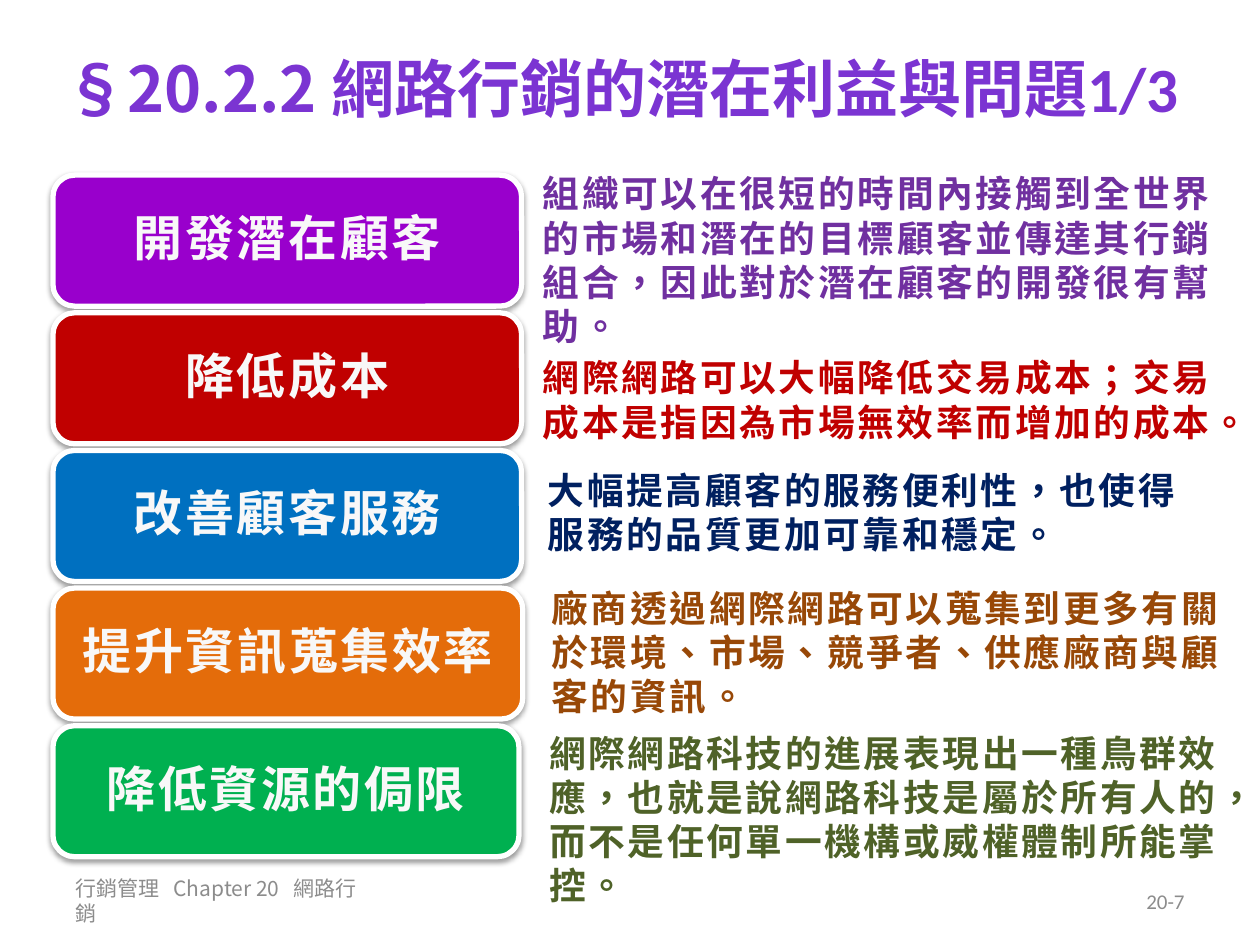
import pptx
import pptx.util
import pptx.dml.color
import pptx.enum.shapes
import pptx.enum.text
import pptx.oxml
import pptx.oxml.ns

Inches, Pt = pptx.util.Inches, pptx.util.Pt
RGBColor = pptx.dml.color.RGBColor
ALIGN = pptx.enum.text.PP_ALIGN
ANCHOR = pptx.enum.text.MSO_ANCHOR

WHITE = RGBColor(0xFF, 0xFF, 0xFF)
LABEL_WHITE = RGBColor(0xF8, 0xF8, 0xF8)
GREY = RGBColor(0x8C, 0x8C, 0x8C)
TITLE_PURPLE = RGBColor(0x7B, 0x34, 0xD2)
VIOLET = RGBColor(0x99, 0x00, 0xCC)
PURPLE = RGBColor(0x70, 0x30, 0xA0)
RED = RGBColor(0xC0, 0x00, 0x00)
BLUE = RGBColor(0x00, 0x70, 0xC0)
NAVY = RGBColor(0x00, 0x20, 0x60)
ORANGE = RGBColor(0xE4, 0x6C, 0x0A)
BROWN = RGBColor(0x98, 0x48, 0x07)
GREEN = RGBColor(0x00, 0xB0, 0x50)
OLIVE = RGBColor(0x4F, 0x62, 0x28)

LATIN, CJK = "Calibri", "Noto Sans CJK SC"

TITLE = [("§20.2.2 ", CJK), ("網路行銷的潛在利益與問題1/3", LATIN)]

# label, fill, label width, explanation, text colour, (left, top, width, height)
BENEFITS = [
    ("開發潛在顧客", VIOLET, 3.72,
     "組織可以在很短的時間內接觸到全世界的市場和潛在的目標顧客並傳達其行銷組合，因此對於潛在顧客的開發很有幫助。",
     PURPLE, (4.21, 1.31, 5.79, 1.51)),
    ("降低成本", RED, 3.72,
     "網際網路可以大幅降低交易成本；交易成本是指因為市場無效率而增加的成本。",
     RED, (4.21, 2.77, 5.77, 0.81)),
    ("改善顧客服務", BLUE, 3.72,
     "大幅提高顧客的服務便利性，也使得服務的品質更加可靠和穩定。",
     NAVY, (4.25, 3.66, 5.48, 0.81)),
    ("提升資訊蒐集效率", ORANGE, 3.73,
     "廠商透過網際網路可以蒐集到更多有關於環境、市場、競爭者、供應廠商與顧客的資訊。",
     BROWN, (4.28, 4.6, 5.65, 1.16)),
    ("降低資源的侷限", GREEN, 3.7,
     "網際網路科技的進展表現出一種鳥群效應，也就是說網路科技是屬於所有人的，而不是任何單一機構或威權體制所能掌控。",
     OLIVE, (4.26, 5.75, 5.61, 1.51)),
]

FOOTERS = [
    ("行銷管理   Chapter 20   網路行銷", CJK, ALIGN.LEFT, (0.5, 6.95, 2.45, 0.4)),
    ("20-7", LATIN, ALIGN.RIGHT, (7.17, 6.95, 2.33, 0.4)),
]

LABEL_LEFT, LABEL_HEIGHT = 0.42, 1.04
FIRST_TOP, LAST_TOP = 1.39, 5.76
ROW_PITCH = (LAST_TOP - FIRST_TOP) / (len(BENEFITS) - 1)

SHADOW = (
    f'<a:effectLst {pptx.oxml.ns.nsdecls("a")}>'
    '<a:outerShdw blurRad="39370" dist="20320" dir="5400000" rotWithShape="0">'
    '<a:srgbClr val="000000"><a:alpha val="38000"/></a:srgbClr>'
    '</a:outerShdw></a:effectLst>'
)


def add_span(para, text, size, color, font=LATIN, bold=False, spacing=0):
    """Add a run; spacing is the extra room between letters in points."""
    span = para.add_run()
    span.text = text
    span.font.name = font
    span.font.size = Pt(size)
    span.font.bold = bold
    span.font.color.rgb = color
    properties = span._r.get_or_add_rPr()
    properties.set("lang", "zh-TW")
    if spacing:
        properties.set("spc", str(int(spacing * 100)))
    east_asian = pptx.oxml.parse_xml(
        f'<a:ea {pptx.oxml.ns.nsdecls("a")} typeface="{CJK}"/>')
    properties.find(pptx.oxml.ns.qn("a:latin")).addnext(east_asian)


def add_text_box(slide, place, text, align=ALIGN.LEFT, anchor=ANCHOR.TOP, **style):
    box = slide.shapes.add_textbox(*map(Inches, place))
    box.text_frame.word_wrap = True
    box.text_frame.vertical_anchor = anchor
    para = box.text_frame.paragraphs[0]
    para.alignment = align
    add_span(para, text, **style)


def add_label(slide, row, text, fill, width):
    label = slide.shapes.add_shape(
        pptx.enum.shapes.MSO_SHAPE.ROUNDED_RECTANGLE,
        Inches(LABEL_LEFT), Inches(FIRST_TOP + row * ROW_PITCH),
        Inches(width), Inches(LABEL_HEIGHT))
    label.fill.solid()
    label.fill.fore_color.rgb = fill
    label.line.color.rgb = WHITE
    label.line.width = Pt(3)
    label._element.spPr.append(pptx.oxml.parse_xml(SHADOW))
    frame = label.text_frame
    frame.word_wrap = True
    frame.vertical_anchor = ANCHOR.MIDDLE
    frame.margin_left = frame.margin_right = Inches(0.12)
    frame.margin_top = frame.margin_bottom = Inches(0.06)
    para = frame.paragraphs[0]
    para.alignment = ALIGN.CENTER
    para.line_spacing = 0.9
    add_span(para, text, size=28, color=LABEL_WHITE, bold=True, spacing=1.5)


def add_title(slide):
    title = slide.shapes.title
    title.left, title.top, title.width, title.height = map(
        Inches, (0.35, 0, 9.16, 1.38))
    title.text_frame.word_wrap = True
    title.text_frame.vertical_anchor = ANCHOR.MIDDLE
    para = title.text_frame.paragraphs[0]
    para.alignment = ALIGN.CENTER
    for text, font in TITLE:
        add_span(para, text, size=36, color=TITLE_PURPLE, font=font, bold=True)


def main():
    deck = pptx.Presentation()
    deck.slide_width, deck.slide_height = Inches(10), Inches(7.5)
    slide = deck.slides.add_slide(deck.slide_layouts.get_by_name("Title Only"))
    add_title(slide)
    for text, font, align, place in FOOTERS:
        add_text_box(slide, place, text, align, ANCHOR.MIDDLE,
                     size=12, color=GREY, font=font)
    for row, (label, fill, width, detail, color, place) in enumerate(BENEFITS):
        add_label(slide, row, label, fill, width)
        add_text_box(slide, place, detail,
                     size=21, color=color, bold=True, spacing=1.5)
    deck.save("out.pptx")


if __name__ == "__main__":
    main()
